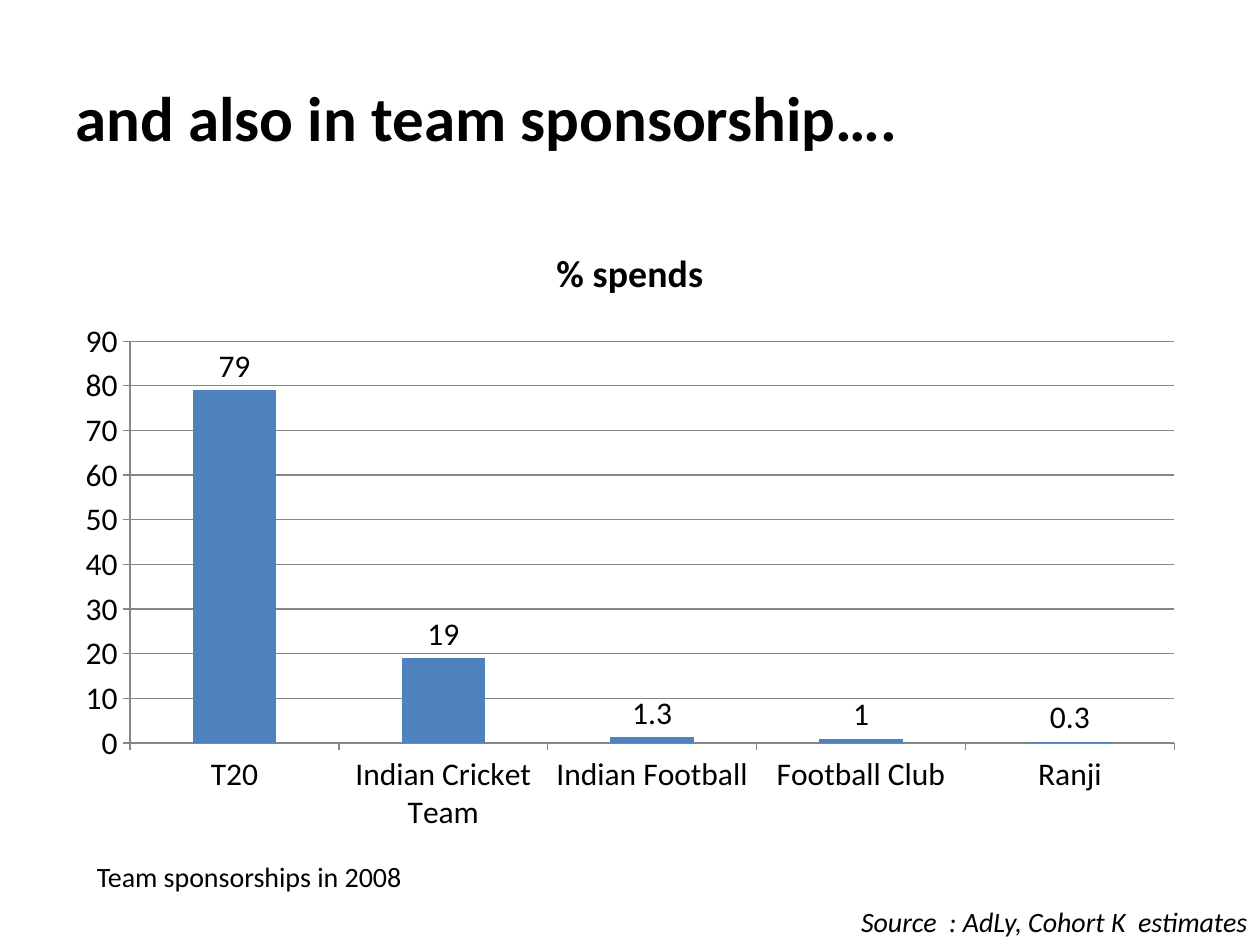
from dataclasses import dataclass

from pptx import Presentation
from pptx.chart.data import CategoryChartData
from pptx.dml.color import RGBColor
from pptx.enum.chart import XL_CHART_TYPE, XL_LABEL_POSITION, XL_TICK_MARK
from pptx.enum.text import MSO_ANCHOR, PP_ALIGN
from pptx.util import Pt

COLUMN = XL_CHART_TYPE.COLUMN_CLUSTERED
OUTSIDE_END = XL_LABEL_POSITION.OUTSIDE_END
TICK_OUTSIDE = XL_TICK_MARK.OUTSIDE
TOP, MIDDLE = MSO_ANCHOR.TOP, MSO_ANCHOR.MIDDLE
LEFT, RIGHT = PP_ALIGN.LEFT, PP_ALIGN.RIGHT


@dataclass(frozen=True)
class Theme:
    """Fonts, colours and type sizes of the slide."""
    font: str = "Calibri"
    ink: RGBColor = RGBColor(0, 0, 0)
    bar: RGBColor = RGBColor(0x4F, 0x81, 0xBD)
    rule: RGBColor = RGBColor(0x86, 0x86, 0x86)
    title: float = 36
    chart_title: float = 21.6
    chart: float = 18
    note: float = 16


THEME = Theme()
SPENDS = {
    "T20": 79,
    "Indian Cricket Team": 19,
    "Indian Football": 1.3,
    "Football Club": 1,
    "Ranji": 0.3,
}


def set_font(font, size, **styles):
    """Apply the theme face and ink with the given size and styles."""
    values = {"name": THEME.font, "size": Pt(size), **styles}
    for name, value in values.items():
        setattr(font, name, value)
    font.color.rgb = THEME.ink


def add_text(page, box, text, size, anchor=MIDDLE, align=LEFT, **styles):
    """Place one line of text in the box."""
    frame = page.shapes.add_textbox(*map(Pt, box)).text_frame
    frame.word_wrap = True
    frame.vertical_anchor = anchor
    para = frame.paragraphs[0]
    para.alignment = align
    span = para.add_run()
    span.text = text
    set_font(span.font, size, **styles)


def style_axis(axis):
    """Give an axis its outward ticks and grey line."""
    axis.major_tick_mark = TICK_OUTSIDE
    axis.format.line.color.rgb = THEME.rule
    axis.format.line.width = Pt(0.75)
    set_font(axis.tick_labels.font, THEME.chart)


def add_spends_chart(page, box, name, spends):
    """Place the labelled column chart in the box."""
    data = CategoryChartData()
    data.categories = list(spends)
    data.add_series(name, list(spends.values()))
    chart = page.shapes.add_chart(COLUMN, *map(Pt, box), data).chart
    set_font(chart.font, THEME.chart)
    chart.has_legend = False
    chart.has_title = True
    title = chart.chart_title.text_frame
    title.text = name
    set_font(title.paragraphs[0].runs[0].font, THEME.chart_title, bold=True)

    for axis in (chart.category_axis, chart.value_axis):
        style_axis(axis)
    scale = chart.value_axis
    for attribute, value in {"minimum_scale": 0, "maximum_scale": 90, "major_unit": 10}.items():
        setattr(scale, attribute, value)
    grid = scale.major_gridlines.format.line
    grid.color.rgb = THEME.rule
    grid.width = Pt(0.75)

    plot = chart.plots[0]
    plot.gap_width = 150
    plot.vary_by_categories = False
    plot.has_data_labels = True
    labels = plot.data_labels
    labels.show_value = True
    labels.position = OUTSIDE_END
    set_font(labels.font, THEME.chart)
    fill = plot.series[0].format.fill
    fill.solid()
    fill.fore_color.rgb = THEME.bar


def main():
    """Build and save the sponsorship slide."""
    deck = Presentation()
    deck.slide_width, deck.slide_height = Pt(720), Pt(540)
    page = deck.slides.add_slide(deck.slide_layouts[6])
    add_text(page, (36, 21.6, 648, 90), "and also in team sponsorship….", THEME.title, bold=True)
    add_spends_chart(page, (36, 126, 648, 356.4), "% spends", SPENDS)
    add_text(page, (48.24, 455.76, 648, 90), "Team sponsorships in 2008", THEME.note)
    add_text(page, (432, 513.36, 288, 26.64), "Source  : AdLy, Cohort K  estimates",
             THEME.note, TOP, RIGHT, italic=True)
    deck.save("out.pptx")


if __name__ == "__main__":
    main()
